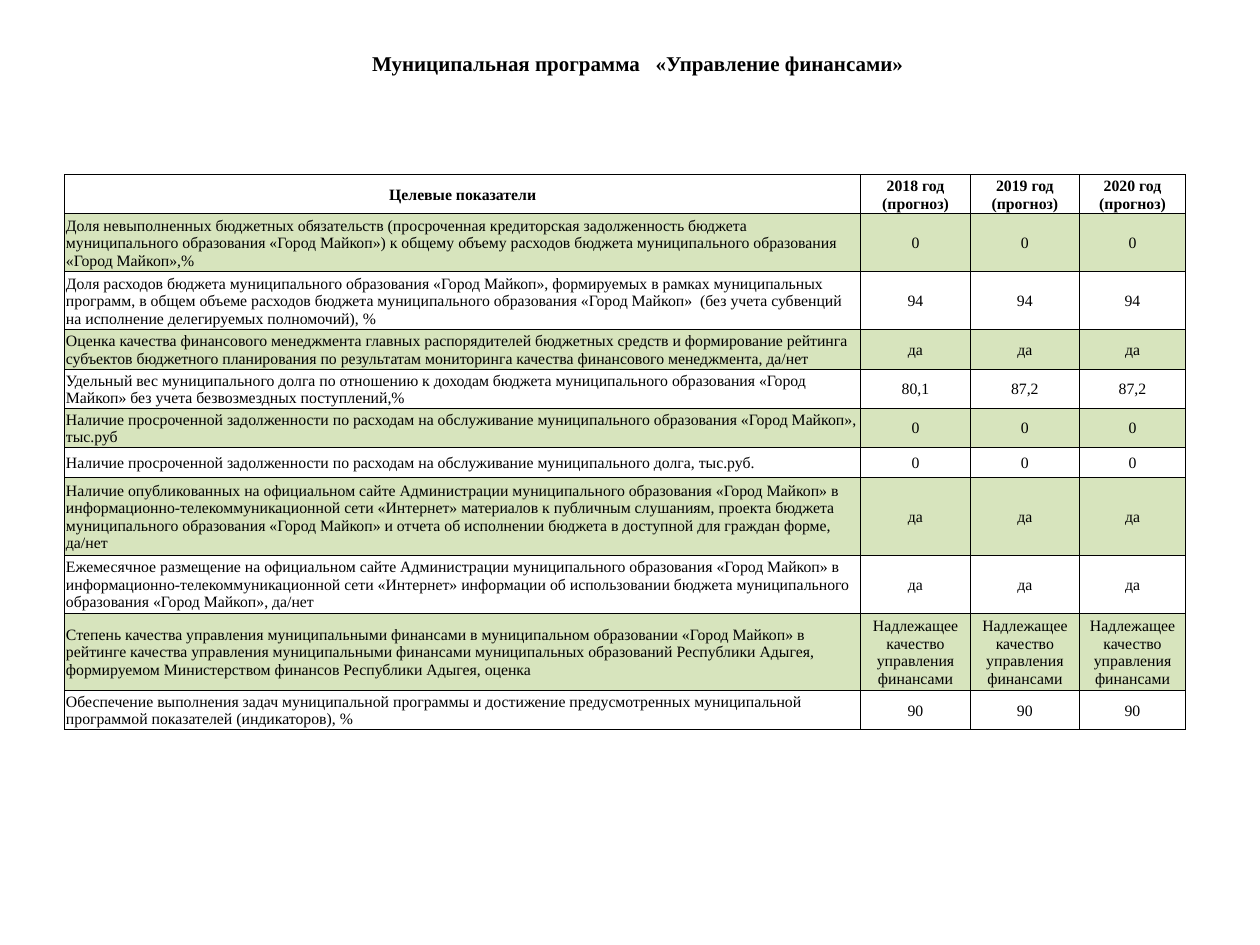
"""Build the slide of target indicators of the municipal finance programme."""
from dataclasses import dataclass

from lxml.etree import SubElement
from pptx import Presentation
from pptx.dml.color import RGBColor
from pptx.enum.text import MSO_ANCHOR as Anchor, MSO_AUTO_SIZE as AutoSize, PP_ALIGN as Align
from pptx.oxml.ns import qn
from pptx.util import Cm, Pt


@dataclass(frozen=True)
class Theme:
    font: str = "Times New Roman"
    ink: str = "000000"
    band: str = "D7E4BD"
    title_size: float = 12
    table_size: float = 9
    border: float = 0.5


theme = Theme()


def style_paragraph(paragraph, size, bold, align):
    paragraph.alignment = align
    font = paragraph.font
    font.name, font.size, font.bold = theme.font, Pt(size), bold
    font.color.rgb = RGBColor.from_string(theme.ink)


def add_borders(cell):
    properties = cell._tc.get_or_add_tcPr()
    for side in ("a:lnL", "a:lnR", "a:lnT", "a:lnB"):
        line = SubElement(properties, qn(side), w=str(Pt(theme.border)))
        fill = SubElement(line, qn("a:solidFill"))
        SubElement(fill, qn("a:srgbClr"), val=theme.ink)


quality = "Надлежащее качество управления финансами"
headings = ["Целевые показатели"] + [f"{year} год\n(прогноз)" for year in (2018, 2019, 2020)]
indicators = [
    ("Доля невыполненных бюджетных обязательств (просроченная кредиторская задолженность бюджета "
     "муниципального образования «Город Майкоп») к общему объему расходов бюджета муниципального "
     "образования «Город Майкоп»,%", ["0"] * 3),
    ("Доля расходов бюджета муниципального образования «Город Майкоп», формируемых в рамках "
     "муниципальных программ, в общем объеме расходов бюджета муниципального образования "
     "«Город Майкоп»  (без учета субвенций на исполнение делегируемых полномочий), %", ["94"] * 3),
    ("Оценка качества финансового менеджмента главных распорядителей бюджетных средств и "
     "формирование рейтинга субъектов бюджетного планирования по результатам мониторинга "
     "качества финансового менеджмента, да/нет", ["да"] * 3),
    ("Удельный вес муниципального долга по отношению к доходам бюджета муниципального образования "
     "«Город Майкоп» без учета безвозмездных поступлений,%", ["80,1", "87,2", "87,2"]),
    ("Наличие просроченной задолженности по расходам на обслуживание муниципального образования "
     "«Город Майкоп», тыс.руб", ["0"] * 3),
    ("Наличие просроченной задолженности по расходам на обслуживание муниципального долга, "
     "тыс.руб.", ["0"] * 3),
    ("Наличие опубликованных на официальном сайте Администрации муниципального образования "
     "«Город Майкоп» в информационно-телекоммуникационной сети «Интернет» материалов к публичным "
     "слушаниям, проекта бюджета муниципального образования «Город Майкоп» и отчета об исполнении "
     "бюджета в доступной для граждан форме, да/нет", ["да"] * 3),
    ("Ежемесячное размещение на официальном сайте Администрации муниципального образования "
     "«Город Майкоп» в информационно-телекоммуникационной сети «Интернет» информации об "
     "использовании бюджета муниципального образования «Город Майкоп», да/нет", ["да"] * 3),
    ("Степень качества управления муниципальными финансами в муниципальном образовании "
     "«Город Майкоп» в рейтинге качества управления муниципальными финансами муниципальных "
     "образований Республики Адыгея, формируемом Министерством финансов Республики Адыгея, "
     "оценка", [quality] * 3),
    ("Обеспечение выполнения задач муниципальной программы и достижение предусмотренных "
     "муниципальной программой показателей (индикаторов), %", ["90"] * 3),
]
rows = [headings] + [[indicator, *forecasts] for indicator, forecasts in indicators]
line_counts = (2, 3, 3, 2, 2, 2, 1, 4, 3, 4, 2)
height_by_lines = {1: 0.61, 2: 0.79, 3: 1.17, 4: 1.56}

deck = Presentation()
deck.slide_width, deck.slide_height = Cm(25.4), Cm(19.05)
slide = deck.slides.add_slide(deck.slide_layouts[5])

programme = slide.shapes.title
programme.left, programme.top = Cm(0.86), Cm(0.89)
programme.width, programme.height = Cm(24), Cm(1.27)
programme.text_frame.text = "Муниципальная программа   «Управление финансами»"
programme.text_frame.vertical_anchor = Anchor.TOP
programme.text_frame.auto_size = AutoSize.NONE
style_paragraph(programme.text_frame.paragraphs[0], theme.title_size, True, Align.CENTER)

targets = slide.shapes.add_table(
    len(rows), len(headings), Cm(1.3), Cm(3.52), Cm(22.6), Cm(11.19)).table
targets.first_row = targets.horz_banding = False
for column, width in zip(targets.columns, (16.05, 2.21, 2.2, 2.14)):
    column.width = Cm(width)
for row, line_count in zip(targets.rows, line_counts):
    row.height = Cm(height_by_lines[line_count])

for row_index, texts in enumerate(rows):
    is_header = row_index == 0
    for column_index, text in enumerate(texts):
        cell = targets.cell(row_index, column_index)
        cell.text = text
        cell.vertical_anchor = Anchor.MIDDLE
        cell.margin_left = cell.margin_right = cell.margin_top = Cm(0.03)
        cell.margin_bottom = Cm(0)
        add_borders(cell)
        if row_index % 2:
            cell.fill.solid()
            cell.fill.fore_color.rgb = RGBColor.from_string(theme.band)
        else:
            cell.fill.background()
        align = Align.CENTER if is_header or column_index else Align.LEFT
        for paragraph in cell.text_frame.paragraphs:
            style_paragraph(paragraph, theme.table_size, is_header, align)

deck.save("out.pptx")
